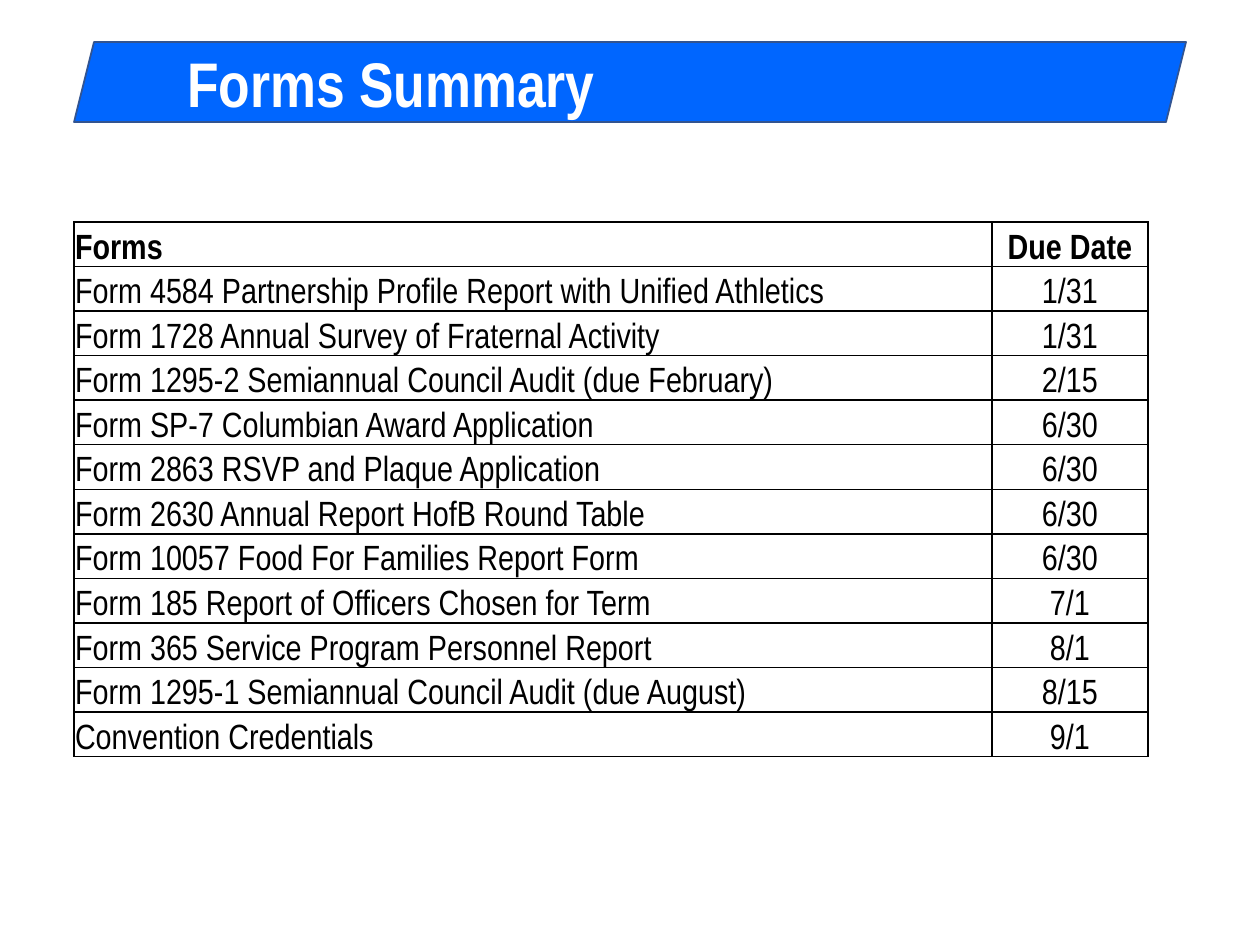
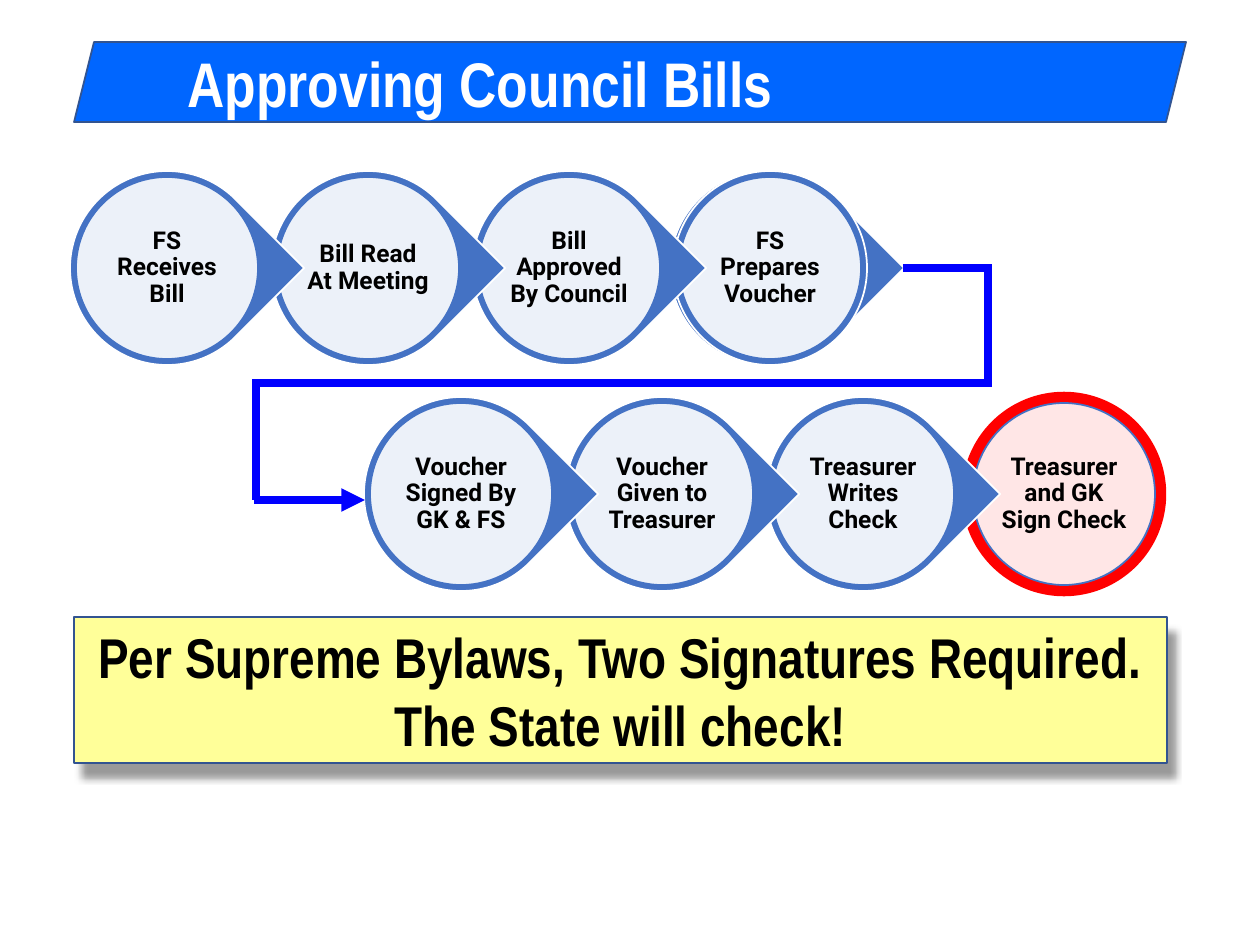
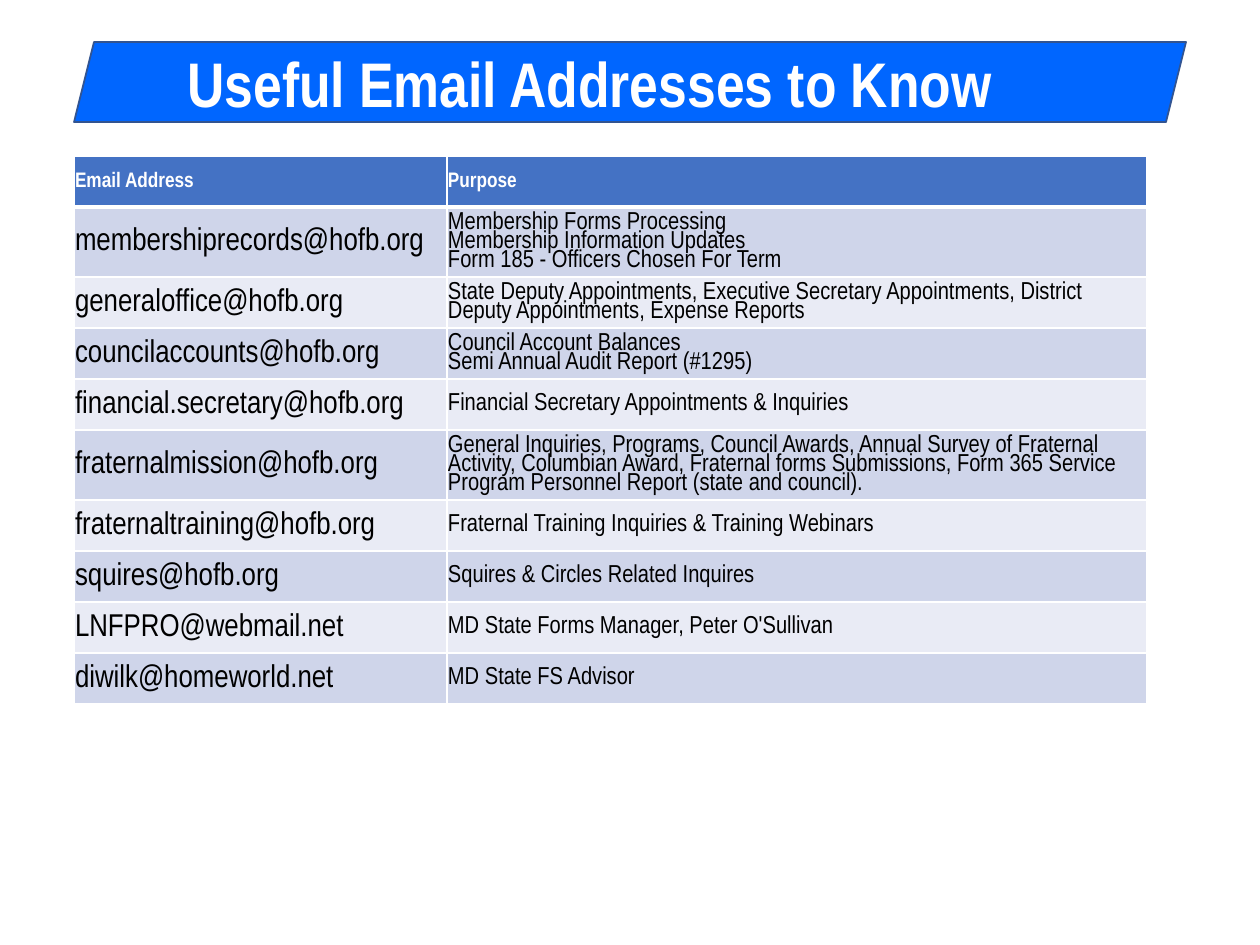
from lxml.etree import SubElement
from pptx import Presentation
from pptx.dml.color import RGBColor as Rgb
from pptx.enum.shapes import MSO_CONNECTOR as Link, MSO_SHAPE as Kind
from pptx.enum.text import MSO_ANCHOR as Anchor, PP_ALIGN as Align
from pptx.oxml.ns import qn
from pptx.util import Emu, Pt

EMU_PER_PX = 914400 / 126
COLORS = {
    "paper": "FFFFFF", "ink": "000000", "band": "0066FF", "edge": "325491",
    "step": "4472C4", "alert": "FF0000", "route": "0000FF", "note": "FFFF99",
    "odd_row": "CFD5EA", "even_row": "E9EBF5",
}
NARROW, ROBOTO = "Arial Narrow", "Roboto"

FORMS = [
    ("Forms", "Due Date"),
    ("Form 4584 Partnership Profile Report with Unified Athletics", "1/31"),
    ("Form 1728 Annual Survey of Fraternal Activity", "1/31"),
    ("Form 1295-2 Semiannual Council Audit (due February)", "2/15"),
    ("Form SP-7 Columbian Award Application", "6/30"),
    ("Form 2863 RSVP and Plaque Application", "6/30"),
    ("Form 2630 Annual Report HofB Round Table", "6/30"),
    ("Form 10057 Food For Families Report Form", "6/30"),
    ("Form 185 Report of Officers Chosen for Term", "7/1"),
    ("Form 365 Service Program Personnel Report", "8/1"),
    ("Form 1295-1 Semiannual Council Audit (due August)", "8/15"),
    ("Convention Credentials", "9/1"),
]
COUNCIL_STEPS = ["FS Receives Bill", "Bill Read At Meeting",
                 "Bill Approved By Council", "FS Prepares Voucher"]
PAYMENT_STEPS = ["Voucher Signed By GK & FS", "Voucher Given to Treasurer",
                 "Treasurer Writes Check", "Treasurer and GK Sign Check"]
ROUTE = [
    ((252, 383), (992, 383)),
    ((256, 383), (256, 500)),
    ((988, 268), (988, 383)),
    ((903, 268), (992, 268)),
]
EMAILS = [
    ("Email Address", "Purpose"),
    ("membershiprecords@hofb.org",
     "Membership Forms Processing\vMembership Information Updates\v"
     "Form 185 - Officers Chosen For Term"),
    ("generaloffice@hofb.org",
     "State Deputy Appointments, Executive Secretary Appointments, "
     "District Deputy Appointments, Expense Reports"),
    ("councilaccounts@hofb.org",
     "Council Account Balances\vSemi Annual Audit Report (#1295)"),
    ("financial.secretary@hofb.org", "Financial Secretary Appointments & Inquiries"),
    ("fraternalmission@hofb.org",
     "General Inquiries, Programs, Council Awards, Annual Survey of Fraternal "
     "Activity, Columbian Award, Fraternal forms Submissions, Form 365 Service "
     "Program Personnel Report (state and council)."),
    ("fraternaltraining@hofb.org", "Fraternal Training Inquiries & Training Webinars"),
    ("squires@hofb.org", "Squires & Circles Related Inquires"),
    ("LNFPRO@webmail.net", "MD State Forms Manager, Peter O'Sullivan"),
    ("diwilk@homeworld.net", "MD State FS Advisor"),
]


def px(length):
    return Emu(round(length * EMU_PER_PX))


def color(name):
    return Rgb.from_string(COLORS[name])


def write(frame, text, size, ink="ink", font=NARROW, bold=True, align=Align.LEFT,
          anchor=Anchor.MIDDLE, spacing=None):
    frame.text = text
    frame.word_wrap = True
    frame.vertical_anchor = anchor
    for paragraph in frame.paragraphs:
        paragraph.alignment = align
        if spacing:
            paragraph.line_spacing = spacing
        for run in paragraph.runs:
            run.font.name = font
            run.font.size = Pt(size)
            run.font.bold = bold
            run.font.color.rgb = color(ink)


def add_figure(slide, kind, left, top, width, height, fill, edge, weight=1):
    figure = slide.shapes.add_shape(kind, px(left), px(top), px(width), px(height))
    figure.shadow.inherit = False
    figure.fill.solid()
    figure.fill.fore_color.rgb = color(fill)
    figure.line.color.rgb = color(edge)
    figure.line.width = Pt(weight)
    return figure


def add_titled_slide(deck, title):
    slide = deck.slides.add_slide(deck.slide_layouts[6])
    band = add_figure(slide, Kind.PARALLELOGRAM, 74, 42, 1112, 80, "band", "edge")
    write(band.text_frame, title, 36, "paper")
    return slide


def add_disc(slide, left, top, text):
    disc = add_figure(slide, Kind.OVAL, left + 6, top + 6, 182, 182, "paper", "step")
    tint = disc.fill._xPr.find(qn("a:solidFill"))[0]
    SubElement(tint, qn("a:alpha"), val="90000")
    label = slide.shapes.add_textbox(px(left + 32), px(top + 32), px(130), px(130))
    frame = label.text_frame
    frame.margin_left = frame.margin_right = px(2)
    frame.margin_top = frame.margin_bottom = px(2)
    write(frame, text, 14, font=ROBOTO, align=Align.CENTER, spacing=0.9)


def add_drop(slide, left, top):
    drop = add_figure(slide, Kind.TEAR, left, top, 194, 194, "step", "paper")
    drop.rotation = 45


def add_chain(slide, left, top, steps, end_fill, end_edge, end_weight):
    last = len(steps) - 1
    for index in range(last, -1, -1):
        x = left + 201 * index
        if index == last:
            add_figure(slide, Kind.OVAL, x, top, 194, 194, end_fill, end_edge, end_weight)
        else:
            add_drop(slide, x, top)
        add_disc(slide, x, top, steps[index])


def add_route(slide, start, end, arrow=False):
    leg = slide.shapes.add_connector(Link.STRAIGHT, *map(px, start + end))
    leg.line.color.rgb = color("route")
    leg.line.width = Pt(4.5)
    if arrow:
        SubElement(leg.line._get_or_add_ln(), qn("a:tailEnd"), type="triangle")
    SubElement(leg._element.spPr, qn("a:effectLst"))


def cast_shadow(figure):
    effects = figure._element.spPr.find(qn("a:effectLst"))
    shadow = SubElement(effects, qn("a:outerShdw"), blurRad=str(Pt(4)),
                        dist=str(Pt(9)), dir=str(63 * 60000), algn="ctr",
                        rotWithShape="0")
    tint = SubElement(shadow, qn("a:srgbClr"), val=COLORS["ink"])
    SubElement(tint, qn("a:alpha"), val="40000")


def set_borders(cell, name, top=1, bottom=1):
    properties = cell._tc.get_or_add_tcPr()
    for side, weight in (("L", 1), ("R", 1), ("T", top), ("B", bottom)):
        border = SubElement(properties, qn(f"a:ln{side}"), w=str(Pt(weight)))
        fill = SubElement(border, qn("a:solidFill"))
        SubElement(fill, qn("a:srgbClr"), val=COLORS[name])


def add_grid(slide, left, top, widths, heights):
    table = slide.shapes.add_table(len(heights), len(widths), px(left), px(top),
                                   px(sum(widths)), px(sum(heights))).table
    table.first_row = table.horz_banding = False
    for column, width in zip(table.columns, widths):
        column.width = px(width)
    for row, height in zip(table.rows, heights):
        row.height = px(height)
    return table


def fill_cell(cell, text, size, fill, **style):
    cell.margin_left = cell.margin_right = cell.margin_top = px(1)
    cell.margin_bottom = 0
    cell.fill.solid()
    cell.fill.fore_color.rgb = color(fill)
    anchor = style.get("anchor", Anchor.MIDDLE)
    write(cell.text_frame, text, size, **style)
    cell.text_frame._txBody.bodyPr.attrib.clear()
    cell.vertical_anchor = anchor


def build_forms(deck):
    slide = add_titled_slide(deck, "Forms Summary")
    count = len(FORMS)
    table = add_grid(slide, 74, 222, [918, 156], [535 / count] * count)
    for r, entry in enumerate(FORMS):
        for c, text in enumerate(entry):
            cell = table.cell(r, c)
            set_borders(cell, "ink")
            fill_cell(cell, text, 20, "paper", bold=r == 0, anchor=Anchor.BOTTOM,
                      align=Align.CENTER if c else Align.LEFT)


def build_bills(deck):
    slide = add_titled_slide(deck, "Approving Council Bills")
    add_drop(slide, 670, 171)
    add_chain(slide, 70, 171, COUNCIL_STEPS, "step", "paper", 1)
    add_chain(slide, 364, 397, PAYMENT_STEPS, "alert", "alert", 6)
    for start, end in ROUTE:
        add_route(slide, start, end)
    add_route(slide, (254, 500), (365, 500), arrow=True)
    notice = add_figure(slide, Kind.RECTANGLE, 74, 617, 1093, 146, "note", "edge")
    cast_shadow(notice)
    write(notice.text_frame,
          "Per Supreme Bylaws, Two Signatures Required. The State will check!",
          32, align=Align.CENTER)


def build_emails(deck):
    slide = add_titled_slide(deck, "Useful Email Addresses to Know")
    three_line_rows = (1, 5)
    heights = [70 if r in three_line_rows else 51 for r in range(len(EMAILS))]
    table = add_grid(slide, 74, 156, [373, 700], heights)
    for r, entry in enumerate(EMAILS):
        for c, text in enumerate(entry):
            cell = table.cell(r, c)
            set_borders(cell, "paper", top=3 if r == 1 else 1, bottom=3 if r == 0 else 1)
            if r == 0:
                fill_cell(cell, text, 12, "step", ink="paper")
            else:
                fill_cell(cell, text, 14 if c else 18, "odd_row" if r % 2 else "even_row",
                          bold=False, spacing=0.82 if c else None)


def main():
    deck = Presentation()
    deck.slide_width, deck.slide_height = px(1260), px(945)
    build_forms(deck)
    build_bills(deck)
    build_emails(deck)
    deck.save("out.pptx")


if __name__ == "__main__":
    main()
